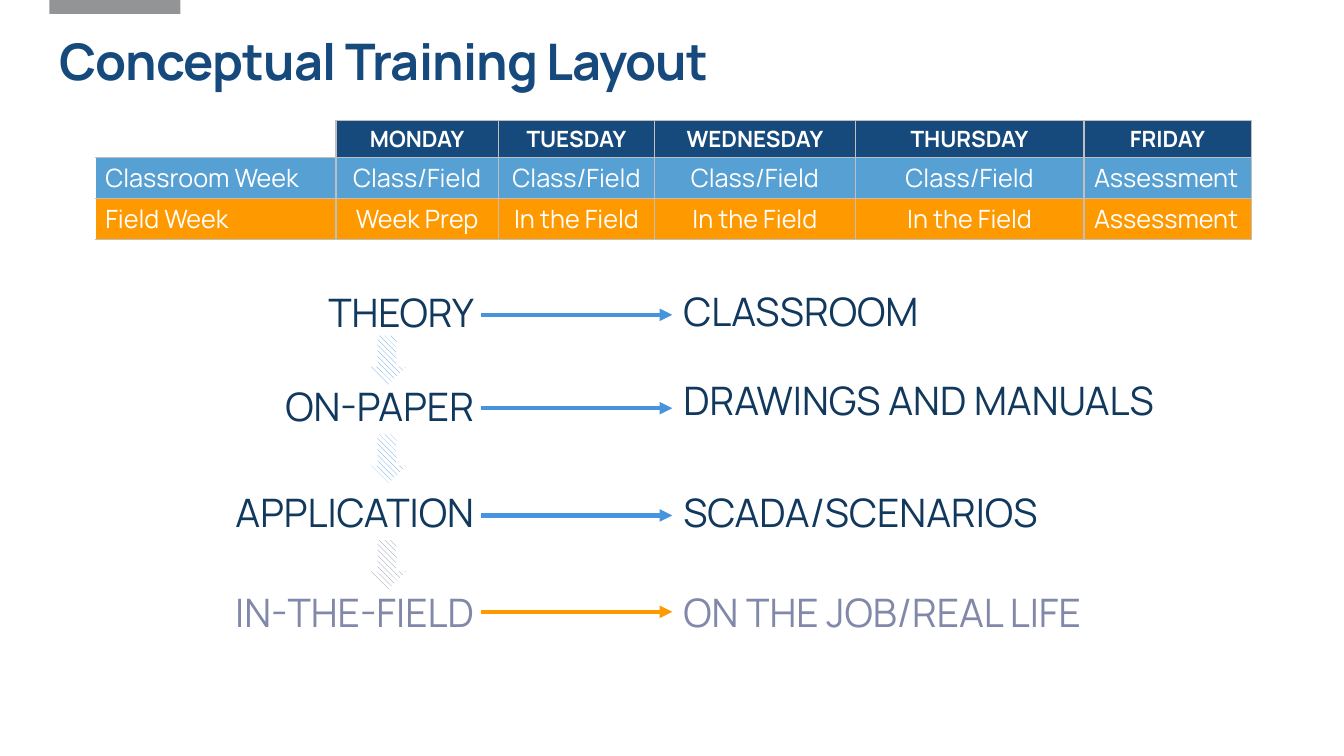
"""Build the conceptual training layout slide."""
from dataclasses import dataclass

from lxml import etree
from pptx import Presentation
from pptx import util as u
from pptx.dml import color
from pptx.enum import dml, shapes, text
from pptx.oxml import ns

FONT = "Manrope"
NAVY, INK, MUTED = "174A7C", "11385D", "8188A9"
BLUE, SKY, ORANGE = "4793DD", "56A0D3", "FF9900"
WHITE, GREY, RULE = "FFFFFF", "929496", "BFBFBF"
LEFT, CENTER, RIGHT = text.PP_ALIGN.LEFT, text.PP_ALIGN.CENTER, text.PP_ALIGN.RIGHT
STAGE_RIGHT, PLACE_LEFT, LABEL_H = 345.6, 481, 41
LINE_X1, LINE_X2 = 343.5, 480.2
DOWN_X, DOWN_W, DOWN_H = 258.5, 36, 27.4
COLUMNS = [172, 116, 111.6, 143.3, 163.4, 119.5]


@dataclass
class Step:
    stage: str
    stage_y: float
    stage_w: float
    place: str
    place_y: float
    place_w: float
    line_y: float
    ink: str = INK
    line: str = BLUE


@dataclass
class DownArrow:
    y: float
    color: str


@dataclass
class Row:
    cells: list[str]
    height: float
    fill: str
    size: float
    bold: bool = False


STEPS = [
    Step("THEORY", 202.3, 183, "CLASSROOM", 202, 269, 224.9),
    Step("ON-PAPER", 269.6, 183, "DRAWINGS AND MANUALS", 265, 443, 291.6),
    Step("APPLICATION", 345.5, 234, "SCADA/SCENARIOS", 345.2, 362, 368.2),
    Step("IN-THE-FIELD", 416.4, 202, "ON THE JOB/REAL LIFE", 416.4, 374, 437, MUTED, ORANGE),
]
DOWN_ARROWS = [DownArrow(244, BLUE), DownArrow(314.6, BLUE), DownArrow(390.2, MUTED)]
ROWS = [
    Row(["", "MONDAY", "TUESDAY", "WEDNESDAY", "THURSDAY", "FRIDAY"], 26.3, NAVY, 16, True),
    Row(["Classroom Week"] + ["Class/Field"] * 4 + ["Assessment"], 29.4, SKY, 18),
    Row(["Field Week", "Week Prep"] + ["In the Field"] * 3 + ["Assessment"], 29.4, ORANGE, 18),
]


def rgb(value: str) -> color.RGBColor:
    return color.RGBColor.from_string(value)


def style(p, size: float, ink: str, bold: bool = False, align=LEFT) -> None:
    p.alignment = align
    for r in p.runs:
        r.font.name, r.font.size, r.font.bold = FONT, u.Pt(size), bold
        r.font.color.rgb = rgb(ink)


def add_label(s, words: str, x: float, y: float, w: float, h: float,
              size: float, ink: str, bold: bool = False, align=LEFT):
    tf = s.shapes.add_textbox(u.Pt(x), u.Pt(y), u.Pt(w), u.Pt(h)).text_frame
    tf.word_wrap = True
    tf.text = words
    style(tf.paragraphs[0], size, ink, bold, align)
    return tf


def add_shape(s, kind, x: float, y: float, w: float, h: float):
    sp = s.shapes.add_shape(kind, u.Pt(x), u.Pt(y), u.Pt(w), u.Pt(h))
    sp.shadow.inherit = False
    sp.line.fill.background()
    return sp


def add_title(s) -> None:
    tf = add_label(s, "Conceptual Training Layout", 35.3, 22.3, 880, 46.8, 36, NAVY, True)
    tf.vertical_anchor = text.MSO_ANCHOR.MIDDLE
    p = tf.paragraphs[0]
    p.line_spacing = 0.9
    p.runs[0].font._element.set("spc", "-60")


def add_down_arrow(s, arrow: DownArrow) -> None:
    sp = add_shape(s, shapes.MSO_SHAPE.RIGHT_ARROW, DOWN_X, arrow.y, DOWN_W, DOWN_H)
    sp.rotation = 90
    sp.fill.patterned()
    sp.fill.pattern = dml.MSO_PATTERN.WIDE_DOWNWARD_DIAGONAL
    sp.fill.fore_color.rgb = rgb(arrow.color)
    sp.fill.back_color.rgb = rgb(WHITE)


def add_step(s, step: Step) -> None:
    add_label(s, step.stage, STAGE_RIGHT - step.stage_w, step.stage_y, step.stage_w,
              LABEL_H, 28, step.ink, align=RIGHT)
    add_label(s, step.place, PLACE_LEFT, step.place_y, step.place_w, LABEL_H, 28, step.ink)
    line = s.shapes.add_connector(shapes.MSO_CONNECTOR.STRAIGHT, u.Pt(LINE_X1),
                                  u.Pt(step.line_y), u.Pt(LINE_X2), u.Pt(step.line_y))
    line.line.color.rgb = rgb(step.line)
    line.line.width = u.Pt(3)
    etree.SubElement(line.line._get_or_add_ln(), ns.qn("a:tailEnd"), type="triangle")
    etree.SubElement(line._element.spPr, ns.qn("a:effectLst"))


def set_borders(cell, sides: dict[str, str]) -> None:
    tc_pr = cell._tc.get_or_add_tcPr()
    for i, (side, ink) in enumerate(sides.items()):
        ln = etree.Element(ns.qn(f"a:ln{side}"), w=str(u.Pt(1)))
        fill = etree.SubElement(ln, ns.qn("a:solidFill"))
        etree.SubElement(fill, ns.qn("a:srgbClr"), val=ink)
        tc_pr.insert(i, ln)


def add_schedule(s) -> None:
    frame = s.shapes.add_table(len(ROWS), len(COLUMNS), u.Pt(68), u.Pt(86),
                               u.Pt(sum(COLUMNS)), u.Pt(sum(row.height for row in ROWS)))
    table = frame.table
    for column, width in zip(table.columns, COLUMNS):
        column.width = u.Pt(width)
    for i, row in enumerate(ROWS):
        table.rows[i].height = u.Pt(row.height)
        for j, words in enumerate(row.cells):
            cell = table.cell(i, j)
            cell.margin_top = cell.margin_bottom = u.Pt(2)
            cell.vertical_anchor = text.MSO_ANCHOR.MIDDLE
            if not words:
                cell.fill.background()
                set_borders(cell, {"R": RULE, "B": RULE})
                continue
            cell.fill.solid()
            cell.fill.fore_color.rgb = rgb(row.fill)
            cell.text_frame.text = words
            align = LEFT if j == 0 or words == "Assessment" else CENTER
            style(cell.text_frame.paragraphs[0], row.size, WHITE, row.bold, align)
            set_borders(cell, {"L": RULE if j else WHITE, "R": RULE, "T": RULE, "B": RULE})


def main() -> None:
    prs = Presentation()
    prs.slide_width, prs.slide_height = u.Pt(960), u.Pt(540)
    s = prs.slides.add_slide(prs.slide_layouts[6])
    tab = add_shape(s, shapes.MSO_SHAPE.RECTANGLE, 35.3, 0, 93.6, 10)
    tab.fill.solid()
    tab.fill.fore_color.rgb = rgb(GREY)
    add_title(s)
    add_schedule(s)
    for arrow in DOWN_ARROWS:
        add_down_arrow(s, arrow)
    for step in STEPS:
        add_step(s, step)
    prs.save("out.pptx")


if __name__ == "__main__":
    main()
